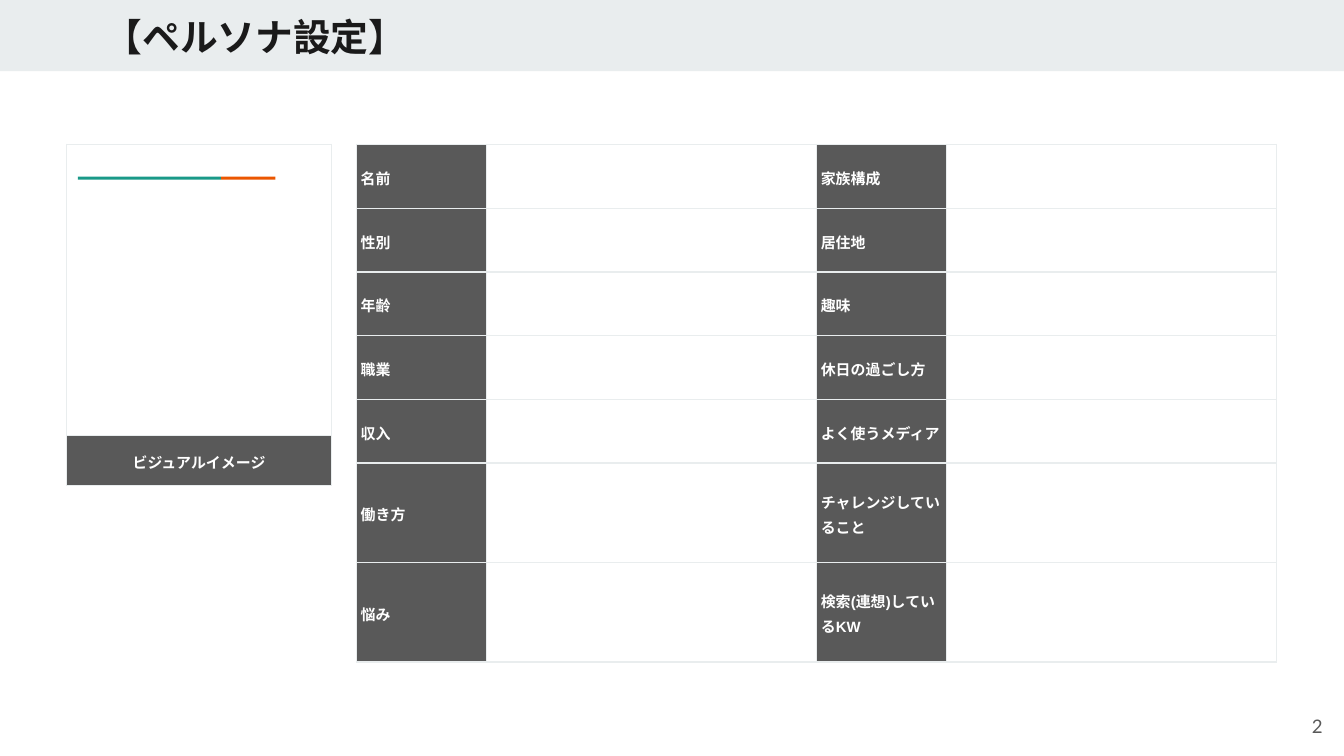
from dataclasses import dataclass
from lxml.etree import SubElement as Sub
from pptx import Presentation
from pptx.dml.color import RGBColor as RGB
from pptx.enum.shapes import MSO_SHAPE as Shape
from pptx.enum.text import MSO_ANCHOR as Anchor, PP_ALIGN as Align
from pptx.oxml.ns import qn
from pptx.util import Pt

TITLE = "【ペルソナ設定】"
PAGE = "2"
CAPTION = "ビジュアルイメージ"
FIELDS = [
    ("名前", "家族構成"),
    ("性別", "居住地"),
    ("年齢", "趣味"),
    ("職業", "休日の過ごし方"),
    ("収入", "よく使うメディア"),
    ("働き方", "チャレンジしていること"),
    ("悩み", "検索(連想)しているKW"),
]


@dataclass
class Theme:
    pale: str = "E9EDEE"
    dark: str = "595959"
    ink: str = "1A1A1A"
    white: str = "FFFFFF"
    green: str = "1A9988"
    orange: str = "EB5600"
    head: float = 20.2
    label: float = 8
    page: float = 10
    rule: float = 0.75


LOOK = Theme()
WIDE, HIGH = 720, 405
TOP = 77.4
COLS = [69.5, 177] * 2
ROWS = [34.15] * 5 + [53.3] * 2


def write(frame, text, size, color, font="Arial", bold=True, align=Align.LEFT, space=None):
    frame.word_wrap = True
    para = frame.paragraphs[0]
    para.alignment = align
    para.line_spacing = space
    run = para.add_run()
    run.text = text
    run.font.size = Pt(size)
    run.font.name = font
    run.font.bold = bold
    run.font.color.rgb = RGB.from_string(color)


def inset(item, x, y):
    item.margin_left = item.margin_right = Pt(x)
    item.margin_top = item.margin_bottom = Pt(y)


def bar(slide, x, y, w, h, color):
    box = slide.shapes.add_shape(Shape.RECTANGLE, Pt(x), Pt(y), Pt(w), Pt(h))
    box.shadow.inherit = False
    box.fill.solid()
    box.fill.fore_color.rgb = RGB.from_string(color)
    box.line.fill.background()


def edge(cell):
    props = cell._tc.get_or_add_tcPr()
    for i, side in enumerate(("lnL", "lnR", "lnT", "lnB")):
        line = props.makeelement(qn(f"a:{side}"), {"w": str(Pt(LOOK.rule))})
        Sub(Sub(line, qn("a:solidFill")), qn("a:srgbClr"), val=LOOK.pale)
        props.insert(i, line)


def grid(slide, x, y, cols, rows, data, align=Align.LEFT):
    frame = slide.shapes.add_table(
        len(rows), len(cols), Pt(x), Pt(y), Pt(sum(cols)), Pt(sum(rows)))
    table = frame.table
    table.first_row = table.horz_banding = False
    for col, w in zip(table.columns, cols):
        col.width = Pt(w)
    for row, h, texts in zip(table.rows, rows, data):
        row.height = Pt(h)
        for cell, text in zip(row.cells, texts):
            inset(cell, 2.25, 1.5)
            cell.vertical_anchor = Anchor.MIDDLE
            if text:
                cell.fill.solid()
                cell.fill.fore_color.rgb = RGB.from_string(LOOK.dark)
                write(cell.text_frame, text, LOOK.label, LOOK.white, align=align, space=1.15)
            else:
                cell.fill.background()
            edge(cell)


def main():
    deck = Presentation()
    deck.slide_width, deck.slide_height = Pt(WIDE), Pt(HIGH)
    slide = deck.slides.add_slide(deck.slide_layouts[5])

    bar(slide, 0, 0, WIDE, 38.2, LOOK.pale)
    bar(slide, 41.8, 94.7, 76.6, 1.6, LOOK.green)
    bar(slide, 118.4, 94.7, 29.1, 1.6, LOOK.orange)

    note = slide.shapes.add_textbox(Pt(672.5), Pt(373.7), Pt(43.2), Pt(31)).text_frame
    inset(note, 7.2, 7.2)
    note.vertical_anchor = Anchor.MIDDLE
    write(note, PAGE, LOOK.page, LOOK.dark, font="Lato", bold=False, align=Align.RIGHT)

    data = [(left, "", right, "") for left, right in FIELDS]
    grid(slide, 191, TOP, COLS, ROWS, data)
    grid(slide, 35.8, TOP, [141.8], [156, 26.6], [("",), (CAPTION,)], align=Align.CENTER)

    title = slide.shapes.title
    title.left, title.top, title.width, title.height = Pt(49), Pt(0), Pt(623), Pt(38.9)
    inset(title.text_frame, 7.2, 7.2)
    title.text_frame.vertical_anchor = Anchor.MIDDLE
    write(title.text_frame, TITLE, LOOK.head, LOOK.ink, font="Manrope")
    slide.shapes._spTree.append(title._element)

    deck.save("out.pptx")


if __name__ == "__main__":
    main()
